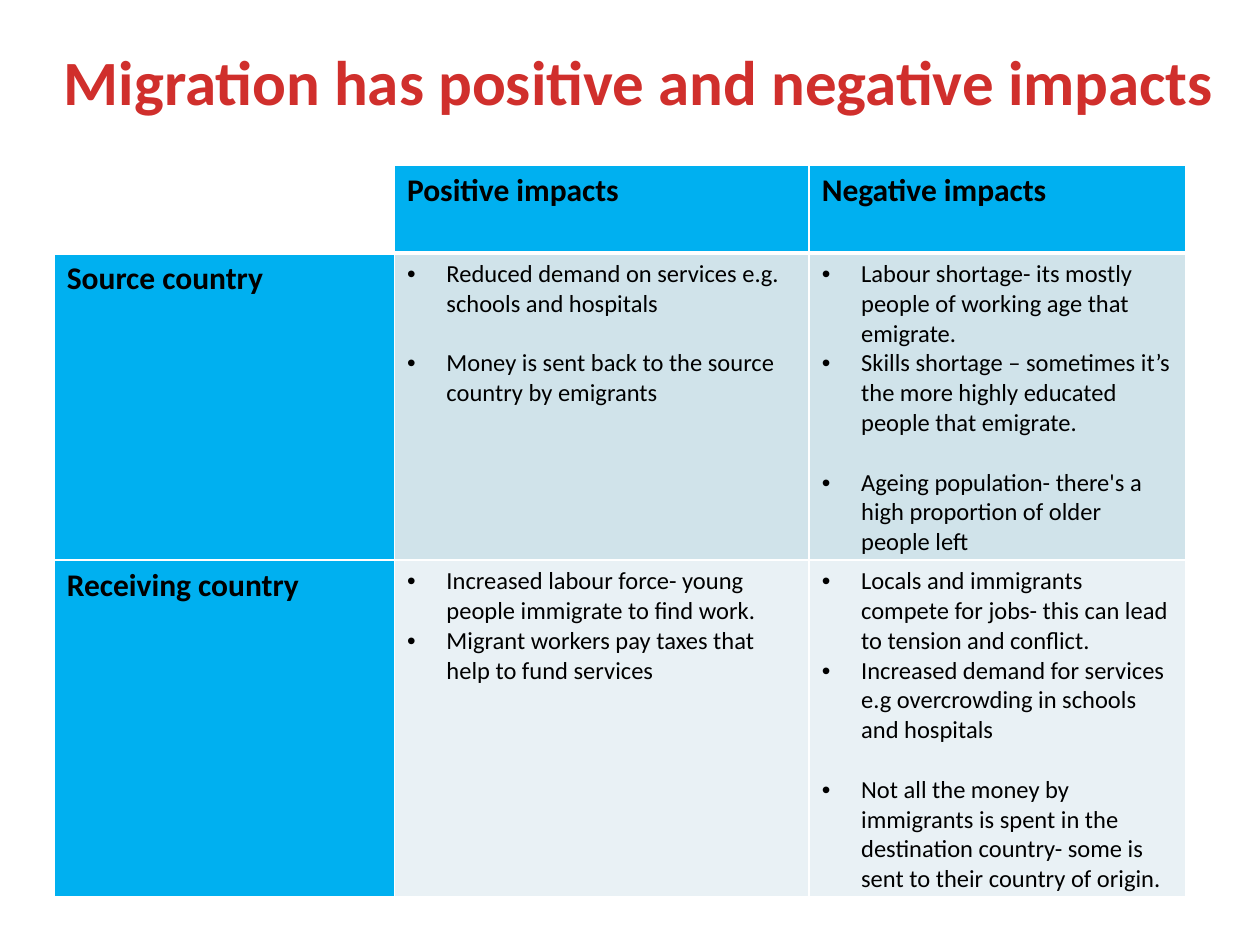
from lxml import etree
from pptx import Presentation
from pptx import util as u
from pptx.dml.color import RGBColor
from pptx.enum import text
from pptx.oxml import ns

RED = RGBColor(0xD0, 0x2F, 0x2C)
BLUE = RGBColor(0x00, 0xB0, 0xF0)
PALE = RGBColor(0xD0, 0xE3, 0xEA)
PALER = RGBColor(0xE9, 0xF1, 0xF5)
BLACK = RGBColor(0, 0, 0)
WHITE = RGBColor(255, 255, 255)

COLUMN_WIDTHS = [194.4, 237, 215.2]
ROW_HEIGHTS = [50, 175.4, 191.6]
HEADINGS = ["", "Positive impacts", "Negative impacts"]
COUNTRIES = [
    ("Source country", PALE, [
        [("Reduced demand on services e.g. schools and hospitals", 0),
         ("Money is sent back to the source country by emigrants", 17)],
        [("Labour shortage- its mostly people of working age that emigrate.", 0),
         ("Skills shortage – sometimes it’s the more highly educated people that emigrate.", 0),
         ("Ageing population- there's a high proportion of older people left", 17)],
    ]),
    ("Receiving country", PALER, [
        [("Increased labour force- young people immigrate to find work.", 0),
         ("Migrant workers pay taxes that help to fund services", 0)],
        [("Locals and immigrants compete for jobs- this can lead to tension and conflict.", 0),
         ("Increased demand for services e.g overcrowding in schools and hospitals", 0),
         ("Not all the money by immigrants is spent in the destination country- "
          "some is sent to their country of origin.", 17)],
    ]),
]


class SlideBuilder:
    font_name = "Calibri"
    heading_size = 18
    body_size = 14
    indent = 22.5

    def __init__(self, page):
        self.page = page

    def style(self, para, size, color, bold=False):
        for span in para.runs:
            span.font.name = self.font_name
            span.font.size = u.Pt(size)
            span.font.bold = bold
            span.font.color.rgb = color

    def title(self, words, left, top, width, height):
        box = self.page.shapes.add_textbox(*map(u.Pt, (left, top, width, height)))
        box.text_frame.word_wrap = True
        para = box.text_frame.paragraphs[0]
        para.text = words
        para.alignment = text.PP_ALIGN.CENTER
        self.style(para, 36, RED, True)

    def table(self, left, top, widths, heights):
        frame = self.page.shapes.add_table(
            len(heights), len(widths), u.Pt(left), u.Pt(top),
            u.Pt(sum(widths)), u.Pt(sum(heights)))
        for column, width in zip(frame.table.columns, widths):
            column.width = u.Pt(width)
        for row, height in zip(frame.table.rows, heights):
            row.height = u.Pt(height)
        return frame.table

    def fill(self, cell, color, top=1, bottom=1):
        cell.fill.solid()
        cell.fill.fore_color.rgb = color
        properties = cell._tc.get_or_add_tcPr()
        edges = [("a:lnL", 1), ("a:lnR", 1), ("a:lnT", top), ("a:lnB", bottom)]
        for position, (tag, weight) in enumerate(edges):
            line = etree.Element(ns.qn(tag), w=str(u.Pt(weight)))
            paint = etree.SubElement(line, ns.qn("a:solidFill"))
            etree.SubElement(paint, ns.qn("a:srgbClr"), val=str(WHITE))
            properties.insert(position, line)

    def heading(self, cell, words):
        cell.text_frame.text = words
        self.style(cell.text_frame.paragraphs[0], self.heading_size, BLACK, True)

    def bullets(self, cell, items):
        frame = cell.text_frame
        frame.text = "\n".join(words for words, gap in items)
        for para, (words, gap) in zip(frame.paragraphs, items):
            self.style(para, self.body_size, BLACK)
            para.space_before = u.Pt(gap)
            properties = para._p.get_or_add_pPr()
            properties.set("marL", str(u.Pt(self.indent)))
            properties.set("indent", str(-u.Pt(self.indent)))
            etree.SubElement(properties, ns.qn("a:buFont"), typeface="Arial")
            etree.SubElement(properties, ns.qn("a:buChar"), char="•")


def main():
    deck = Presentation()
    deck.slide_width, deck.slide_height = u.Pt(720), u.Pt(540)
    builder = SlideBuilder(deck.slides.add_slide(deck.slide_layouts[6]))
    builder.title("Migration has positive and negative impacts", 10.8, 20.9, 708.5, 51)

    impacts = builder.table(31, 94.5, COLUMN_WIDTHS, ROW_HEIGHTS)
    for column, words in enumerate(HEADINGS):
        cell = impacts.cell(0, column)
        builder.fill(cell, BLUE if words else WHITE, bottom=3)
        builder.heading(cell, words)
    for row, (country, shade, lists) in enumerate(COUNTRIES, 1):
        top = 3 if row == 1 else 1
        builder.fill(impacts.cell(row, 0), BLUE, top)
        builder.heading(impacts.cell(row, 0), country)
        for column, items in enumerate(lists, 1):
            builder.fill(impacts.cell(row, column), shade, top)
            builder.bullets(impacts.cell(row, column), items)
    deck.save("out.pptx")


if __name__ == "__main__":
    main()
